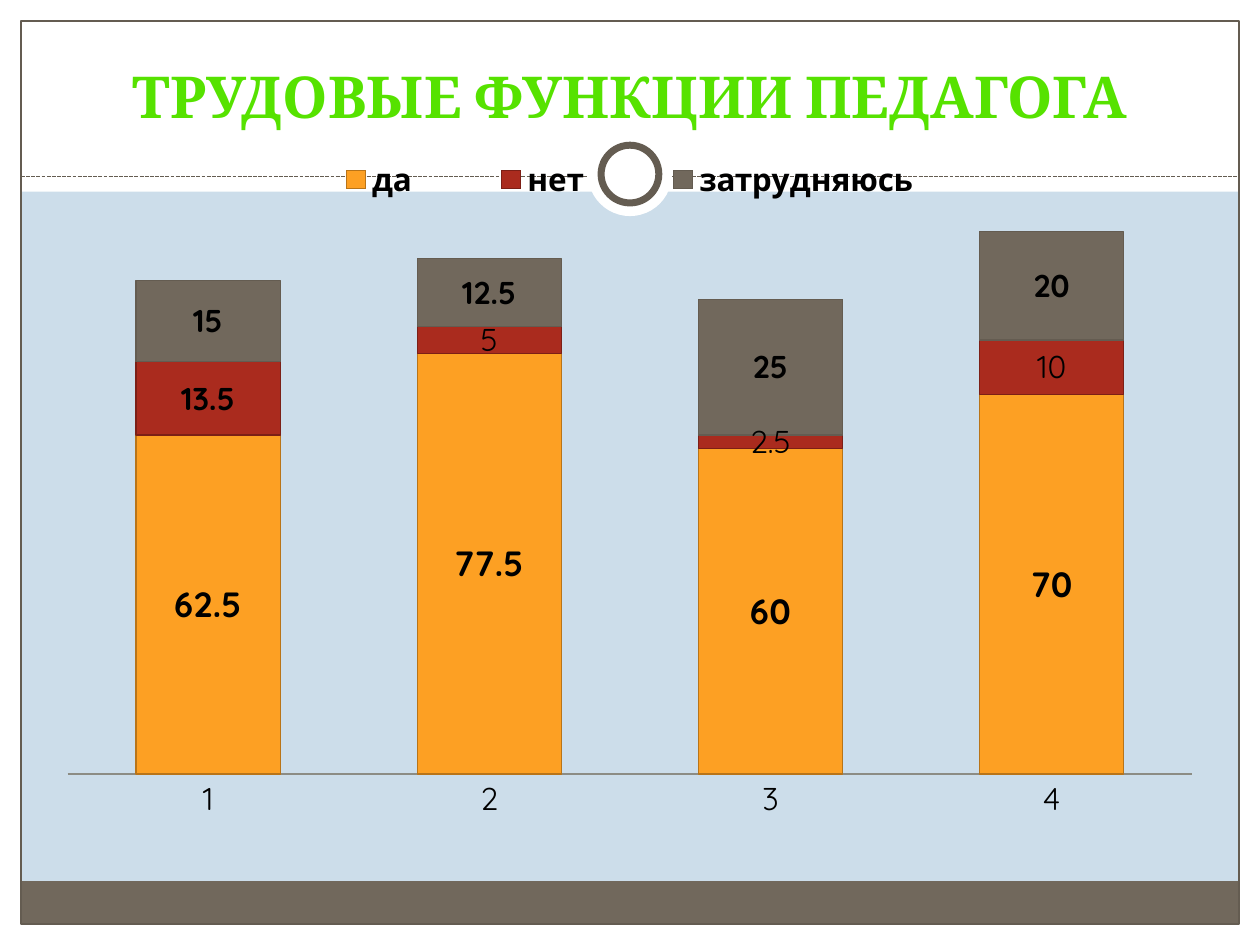
from lxml import etree
from pptx import Presentation
from pptx import util as u
from pptx.chart import data as chart_data
from pptx.dml.color import RGBColor
from pptx.enum import chart as charts
from pptx.enum import dml, shapes, text
from pptx.oxml import ns

WHITE = RGBColor(0xFF, 0xFF, 0xFF)
BLACK = RGBColor(0x00, 0x00, 0x00)
SKY = RGBColor(0xCC, 0xDD, 0xEA)
TAUPE = RGBColor(0x71, 0x68, 0x5C)
DARK_TAUPE = RGBColor(0x64, 0x5C, 0x51)
AXIS_GREY = RGBColor(0x8C, 0x8C, 0x84)
GREEN = RGBColor(0x56, 0xE2, 0x00)
ORANGE = RGBColor(0xFD, 0xA0, 0x23)
DARK_ORANGE = RGBColor(0xB9, 0x74, 0x18)
RED = RGBColor(0xAA, 0x2B, 0x1E)
DARK_RED = RGBColor(0x7C, 0x1F, 0x16)

WIDTH, HEIGHT, MARGIN = 720, 540, 12
CATEGORIES = ["1", "2", "3", "4"]
SERIES = [
    ("да", (62.5, 77.5, 60, 70), ORANGE, DARK_ORANGE, {"size": u.Pt(20), "bold": True}),
    ("нет", (13.5, 5, 2.5, 10), RED, DARK_RED, {"size": u.Pt(18), "bold": False}),
    ("затрудняюсь", (15, 12.5, 25, 20), TAUPE, DARK_TAUPE, {"size": u.Pt(18), "bold": True}),
]


def apply_format(target, values):
    """Set each named attribute on the target."""
    for name, value in values.items():
        setattr(target, name, value)


def format_font(font, color=BLACK, **values):
    """Give a font its colour and other format values."""
    apply_format(font, {"name": "Quicksand", **values})
    font.fill.solid()
    font.fill.fore_color.rgb = color


def format_line(line, color, weight=0.75):
    """Give an outline its colour and weight."""
    line.color.rgb = color
    line.width = u.Pt(weight)


def add_panel(page, kind, bounds, fill=None, line=None, weight=0.75):
    """Add a preset shape with an optional fill and outline."""
    panel = page.shapes.add_shape(kind, *map(u.Pt, bounds))
    panel.shadow.inherit = False
    if fill is None:
        panel.fill.background()
    else:
        panel.fill.solid()
        panel.fill.fore_color.rgb = fill
    if line is None:
        panel.line.fill.background()
    else:
        format_line(panel.line, line, weight)


def add_divider(page, left, right, top):
    """Add the dashed horizontal rule."""
    rule = page.shapes.add_connector(
        shapes.MSO_CONNECTOR.STRAIGHT, u.Pt(left), u.Pt(top), u.Pt(right), u.Pt(top))
    format_line(rule.line, DARK_TAUPE)
    rule.line.dash_style = dml.MSO_LINE.SQUARE_DOT
    etree.SubElement(rule._element.spPr, ns.qn("a:effectLst"))


def add_frame(page):
    """Draw the margins, footer band, border, rule and ring."""
    rectangle, oval = shapes.MSO_SHAPE.RECTANGLE, shapes.MSO_SHAPE.OVAL
    inner = WIDTH - 2 * MARGIN
    for bounds in (
        (0, HEIGHT - MARGIN, WIDTH, MARGIN),
        (0, 0, WIDTH, 109.5),
        (0, 0, MARGIN, HEIGHT),
        (WIDTH - MARGIN, 0, MARGIN, HEIGHT),
    ):
        add_panel(page, rectangle, bounds, WHITE)
    add_panel(page, rectangle, (MARGIN, 503.5, inner, 24.5), TAUPE)
    add_panel(page, rectangle, (MARGIN, MARGIN, inner, HEIGHT - 2 * MARGIN), line=DARK_TAUPE)
    add_divider(page, MARGIN, WIDTH - MARGIN, 100.8)
    for diameter, line in ((48, None), (33, DARK_TAUPE)):
        bounds = ((WIDTH - diameter) / 2, 99.5 - diameter / 2, diameter, diameter)
        add_panel(page, oval, bounds, WHITE, line, 4)


def set_layout(element, x, y, w, h, target=None):
    """Place a chart part by fractions of the chart area."""
    for old in element.findall(ns.qn("c:layout")):
        element.remove(old)
    layout = etree.Element(ns.qn("c:layout"))
    manual = etree.SubElement(layout, ns.qn("c:manualLayout"))
    values = {"xMode": "edge", "yMode": "edge", "x": x, "y": y, "w": w, "h": h}
    if target:
        values = {"layoutTarget": target, **values}
    for name, value in values.items():
        etree.SubElement(manual, ns.qn(f"c:{name}"), val=str(value))
    position = element.find(ns.qn("c:legendPos"))
    if position is None:
        element.insert(0, layout)
    else:
        position.addnext(layout)


def format_axes(chart):
    """Keep only the category axis line and its labels."""
    apply_format(chart.value_axis, {
        "visible": False, "has_major_gridlines": False,
        "minimum_scale": 0, "maximum_scale": 100})
    apply_format(chart.category_axis, {
        "major_tick_mark": charts.XL_TICK_MARK.NONE,
        "minor_tick_mark": charts.XL_TICK_MARK.NONE})
    format_line(chart.category_axis.format.line, AXIS_GREY)


def format_series(series, fill, outline, label_font):
    """Colour one series and show its centred values."""
    series.format.fill.solid()
    series.format.fill.fore_color.rgb = fill
    format_line(series.format.line, outline)
    labels = series.data_labels
    apply_format(labels, {"show_value": True, "position": charts.XL_LABEL_POSITION.CENTER})
    format_font(labels.font, **label_font)


def add_answers_chart(page):
    """Add the stacked columns of survey answers."""
    answers = chart_data.CategoryChartData()
    answers.categories = CATEGORIES
    for name, values, *_ in SERIES:
        answers.add_series(name, values)
    chart = page.shapes.add_chart(
        charts.XL_CHART_TYPE.COLUMN_STACKED,
        *map(u.Pt, (25.2, 26, 669.6, 450.5)), answers).chart
    apply_format(chart, {"has_title": False, "has_legend": True})
    format_font(chart.font, size=u.Pt(18))
    format_axes(chart)
    plot = chart.plots[0]
    apply_format(plot, {"gap_width": 95, "overlap": 100, "vary_by_categories": False})
    for series, (_, _, fill, outline, label_font) in zip(plot.series, SERIES):
        format_series(series, fill, outline, label_font)
    first_no = plot.series[1].points[0].data_label
    format_font(first_no.font, size=u.Pt(18), bold=True)
    first_no.position = charts.XL_LABEL_POSITION.CENTER
    apply_format(chart.legend, {
        "position": charts.XL_LEGEND_POSITION.TOP, "include_in_layout": False})
    format_font(chart.legend.font, size=u.Pt(18), bold=True)
    set_layout(chart.legend._element, 0.19, 0.14, 0.62, 0.06)
    plot_area = chart._chartSpace.find(f".//{ns.qn('c:plotArea')}")
    set_layout(plot_area, 0.02, 0.236, 0.96, 0.688, "inner")


def add_title(page, wording):
    """Fill the title placeholder and bring it to the front."""
    title = page.shapes.title
    apply_format(title, {
        "left": u.Pt(24), "top": u.Pt(18), "width": u.Pt(672), "height": u.Pt(60)})
    apply_format(title.text_frame, {
        "vertical_anchor": text.MSO_ANCHOR.BOTTOM, "word_wrap": True,
        "auto_size": text.MSO_AUTO_SIZE.NONE})
    para = title.text_frame.paragraphs[0]
    para.alignment = text.PP_ALIGN.CENTER
    span = para.add_run()
    span.text = wording
    format_font(span.font, GREEN, name="Cambria", size=u.Pt(33), bold=True)
    page.shapes._spTree.append(title._element)


def main():
    """Build the deck and save it."""
    deck = Presentation()
    apply_format(deck, {"slide_width": u.Pt(WIDTH), "slide_height": u.Pt(HEIGHT)})
    page = deck.slides.add_slide(deck.slide_layouts[5])
    page.background.fill.solid()
    page.background.fill.fore_color.rgb = SKY
    add_frame(page)
    add_answers_chart(page)
    add_title(page, "ТРУДОВЫЕ ФУНКЦИИ ПЕДАГОГА")
    deck.save("out.pptx")


if __name__ == "__main__":
    main()
